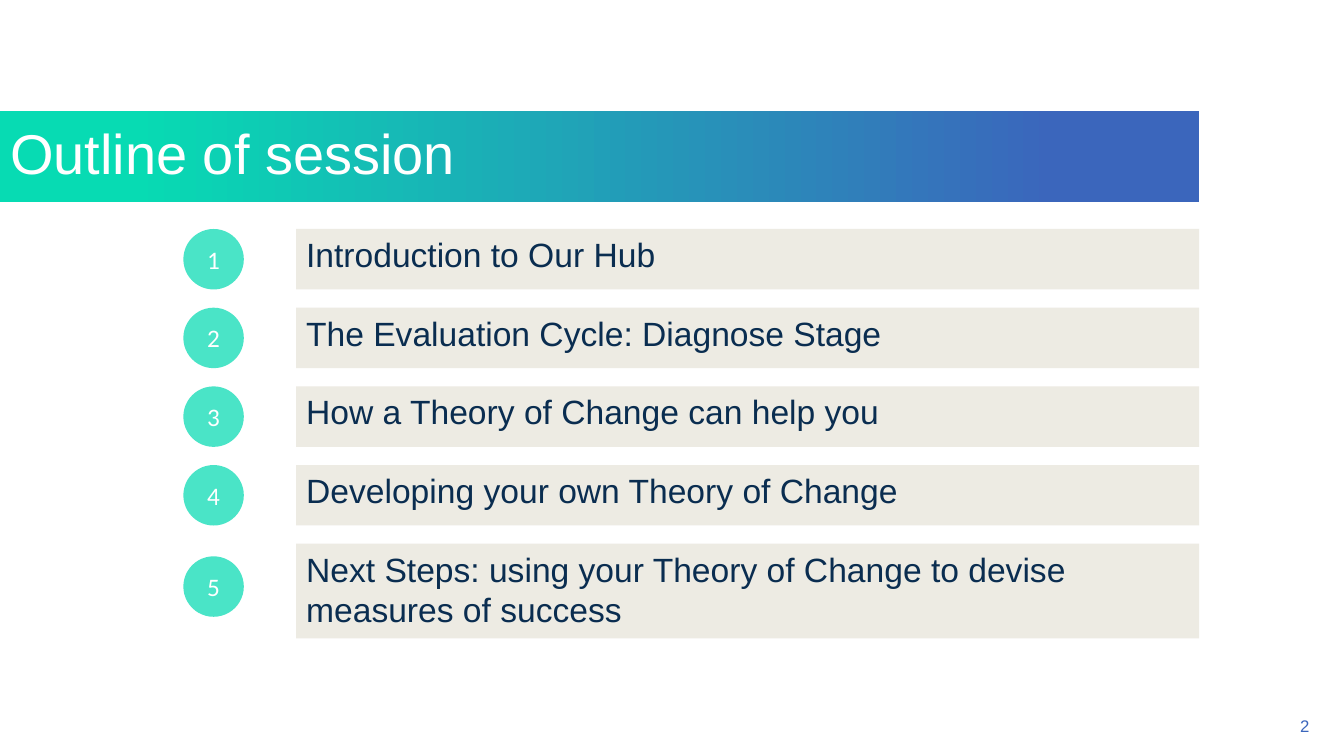
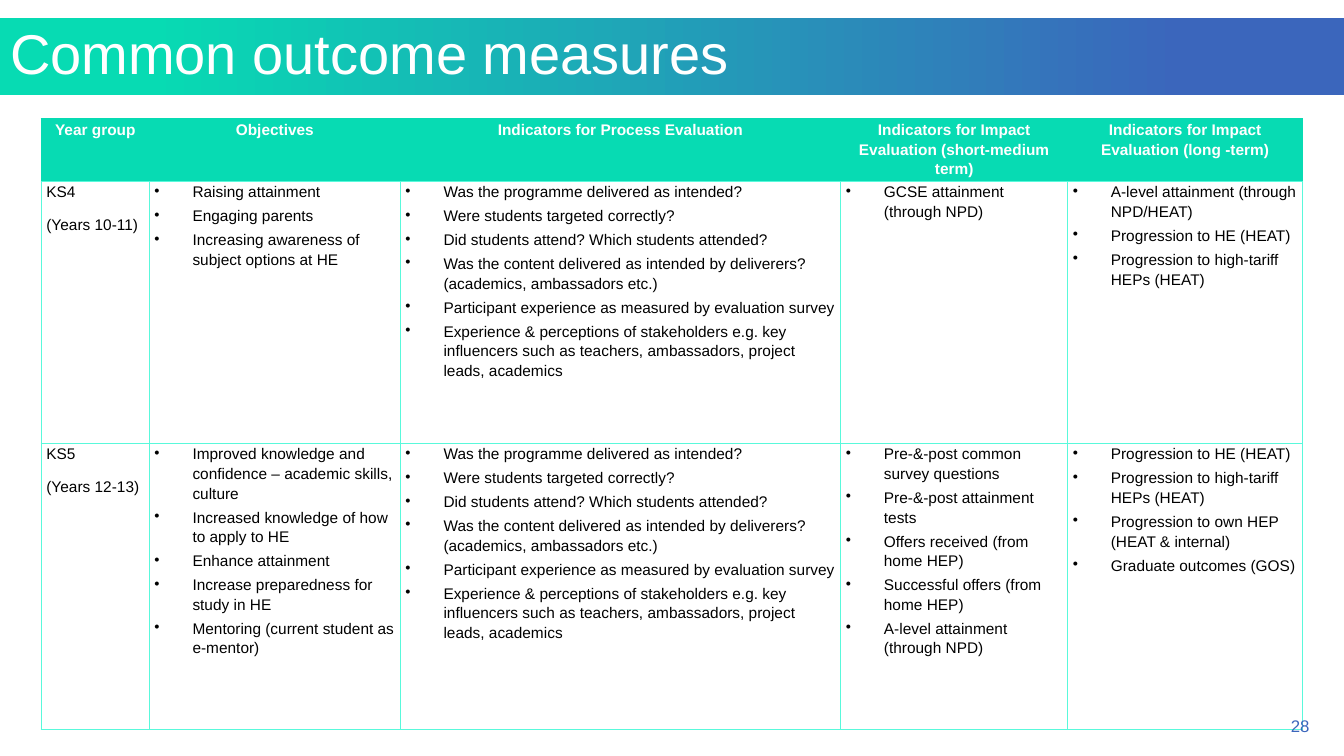
from dataclasses import dataclass

from lxml import etree
from pptx import Presentation
from pptx.dml.color import RGBColor
from pptx.enum.shapes import MSO_SHAPE
from pptx.enum.text import MSO_ANCHOR, MSO_AUTO_SIZE, PP_ALIGN
from pptx.oxml.ns import qn
from pptx.util import Pt

LEFT, CENTER, RIGHT = PP_ALIGN.LEFT, PP_ALIGN.CENTER, PP_ALIGN.RIGHT
TOP, MIDDLE, BOTTOM = MSO_ANCHOR.TOP, MSO_ANCHOR.MIDDLE, MSO_ANCHOR.BOTTOM
RECT, OVAL = MSO_SHAPE.RECTANGLE, MSO_SHAPE.OVAL
NO_FIT = MSO_AUTO_SIZE.NONE


@dataclass(frozen=True)
class Theme:
    green: str = "07DBB3"
    mint: str = "59F9DB"
    blue: str = "3B66BC"
    navy: str = "0A2D50"
    sand: str = "EDEBE3"
    white: str = "FFFFFF"
    black: str = "000000"
    font: str = "Arial"
    dot_font: str = "Calibri"
    title: int = 40
    item: int = 24
    dot: int = 18
    page: int = 12
    cell: int = 11


THEME = Theme()
WIDTH, HEIGHT = 960, 540

AGENDA = [
    ("Introduction to Our Hub", 43.2, 0),
    ("The Evaluation Cycle: Diagnose Stage", 43.2, 0),
    ("How a Theory of Change can help you", 43.2, 0),
    ("Developing your own Theory of Change", 43.2, 0),
    ("Next Steps: using your Theory of Change to devise measures of success", 67.7, 9),
]

COLS = [77.2, 179.3, 314.6, 162.1, 167.9]
ROWS = [44.6, 187.2, 204.5]
HEADS = [
    "Year group",
    "Objectives",
    "Indicators for Process Evaluation",
    "Indicators for Impact Evaluation (short-medium term)",
    "Indicators for Impact Evaluation (long -term)",
]
PROCESS = [
    "Was the programme delivered as intended?",
    "Were students targeted correctly?",
    "Did students attend? Which students attended?",
    "Was the content delivered as intended by deliverers? (academics, ambassadors etc.)",
    "Participant experience as measured by evaluation survey",
    "Experience & perceptions of stakeholders e.g. key influencers such as teachers, "
    "ambassadors, project leads, academics",
]
STAGES = [
    [
        ["KS4", "(Years 10-11)"],
        ["Raising attainment", "Engaging parents",
         "Increasing awareness of subject options at HE"],
        PROCESS,
        ["GCSE attainment (through NPD)"],
        ["A-level attainment (through NPD/HEAT)", "Progression to HE (HEAT)",
         "Progression to high-tariff HEPs (HEAT)"],
    ],
    [
        ["KS5", "(Years 12-13)"],
        ["Improved knowledge and confidence – academic skills, culture",
         "Increased knowledge of how to apply to HE", "Enhance attainment",
         "Increase preparedness for study in HE",
         "Mentoring (current student as e-mentor)"],
        PROCESS,
        ["Pre-&-post common survey questions", "Pre-&-post attainment tests",
         "Offers received (from home HEP)", "Successful offers (from home HEP)",
         "A-level attainment (through NPD)"],
        ["Progression to HE (HEAT)", "Progression to high-tariff HEPs (HEAT)",
         "Progression to own HEP (HEAT & internal)", "Graduate outcomes (GOS)"],
    ],
]


def rgb(code):
    return RGBColor.from_string(code)


def write(frame, lines, size, color, font=THEME.font, bold=False, align=LEFT,
          anchor=TOP, lead=1.0, gap=0, bullet=False):
    frame.word_wrap = True
    frame.vertical_anchor = anchor
    for i, line in enumerate(lines):
        para = frame.paragraphs[0] if i == 0 else frame.add_paragraph()
        para.alignment = align
        para.line_spacing = lead
        if i:
            para.space_before = Pt(gap)
        if bullet:
            props = para._p.get_or_add_pPr()
            props.set("marL", str(Pt(27.2)))
            props.set("indent", str(-Pt(27.2)))
            etree.SubElement(props, qn("a:buChar")).set("char", "•")
        run = para.add_run()
        run.text = line
        run.font.size = Pt(size)
        run.font.name = font
        run.font.bold = bold
        run.font.color.rgb = rgb(color)


def add_block(slide, kind, box, color, alpha=None):
    shape = slide.shapes.add_shape(kind, *map(Pt, box))
    shape.shadow.inherit = False
    shape.fill.solid()
    shape.fill.fore_color.rgb = rgb(color)
    shape.line.fill.background()
    if alpha is not None:
        tint = shape.fill._xPr.find(".//" + qn("a:srgbClr"))
        etree.SubElement(tint, qn("a:alpha")).set("val", str(alpha * 1000))
    return shape


def add_title(slide, box, text):
    title = slide.shapes.title
    title.left, title.top, title.width, title.height = map(Pt, box)
    title.fill.gradient()
    title.fill.gradient_angle = 180
    stops = [(0.12, THEME.blue), (0.89, THEME.green)]
    for stop, (place, color) in zip(title.fill.gradient_stops, stops):
        stop.position = place
        stop.color.rgb = rgb(color)
    title.text_frame.auto_size = NO_FIT
    write(title.text_frame, [text], THEME.title, THEME.white, anchor=MIDDLE, lead=0.9)


def add_page(slide, number):
    box = slide.shapes.add_textbox(*map(Pt, (726.5, 511.2, 216, 18)))
    write(box.text_frame, [number], THEME.page, THEME.blue, align=RIGHT, anchor=BOTTOM)


def add_list(slide, box, items):
    left, top, width = box
    pitch, side, inset = 56.2, 43.2, 80.6
    for i, (text, height, drop) in enumerate(items):
        y = top + i * pitch
        dot = add_block(slide, OVAL, (left, y + drop, side, side), THEME.green, alpha=73)
        write(dot.text_frame, [str(i + 1)], THEME.dot, THEME.white,
              font=THEME.dot_font, align=CENTER, anchor=MIDDLE)
        bar = add_block(slide, RECT, (left + inset, y, width - inset, height), THEME.sand)
        write(bar.text_frame, [text], THEME.item, THEME.navy)


def set_edges(cell, color):
    props = cell._tc.get_or_add_tcPr()
    for i, tag in enumerate(("a:lnL", "a:lnR", "a:lnT", "a:lnB")):
        line = etree.Element(qn(tag), w=str(Pt(1)))
        fill = etree.SubElement(line, qn("a:solidFill"))
        etree.SubElement(fill, qn("a:srgbClr")).set("val", color)
        props.insert(i, line)


def fill_cell(cell, lines, head, **style):
    cell.margin_left = cell.margin_right = Pt(3.6)
    cell.margin_top = cell.margin_bottom = 0
    if head:
        cell.fill.solid()
        cell.fill.fore_color.rgb = rgb(THEME.green)
    else:
        cell.fill.background()
    set_edges(cell, THEME.green if head else THEME.mint)
    color = THEME.white if head else THEME.black
    write(cell.text_frame, lines, THEME.cell, color, lead=1.15, **style)


def add_grid(slide, spot, heads, stages):
    size = (sum(COLS), sum(ROWS))
    frame = slide.shapes.add_table(len(ROWS), len(COLS), *map(Pt, spot + size))
    table = frame.table
    table.horz_banding = False
    for col, width in zip(table.columns, COLS):
        col.width = Pt(width)
    for row, height in zip(table.rows, ROWS):
        row.height = Pt(height)
    for c, text in enumerate(heads):
        fill_cell(table.cell(0, c), [text], True, bold=True, align=CENTER)
    for r, stage in enumerate(stages, 1):
        for c, lines in enumerate(stage):
            fill_cell(table.cell(r, c), lines, False, bullet=c > 0, gap=3 if c else 9)


def add_slide(deck, box, title):
    slide = deck.slides.add_slide(deck.slide_layouts[5])
    add_title(slide, box, title)
    return slide


def main():
    deck = Presentation()
    deck.slide_width, deck.slide_height = Pt(WIDTH), Pt(HEIGHT)

    outline = add_slide(deck, (0, 79.6, 856.6, 64.8), "Outline of session")
    add_list(outline, (131, 163.6, 725.6), AGENDA)
    add_page(outline, "2")

    measures = add_slide(deck, (0, 12.6, WIDTH, 55.2), "Common outcome measures")
    add_grid(measures, (29.5, 85), HEADS, STAGES)
    add_page(measures, "28")

    deck.save("out.pptx")


if __name__ == "__main__":
    main()
